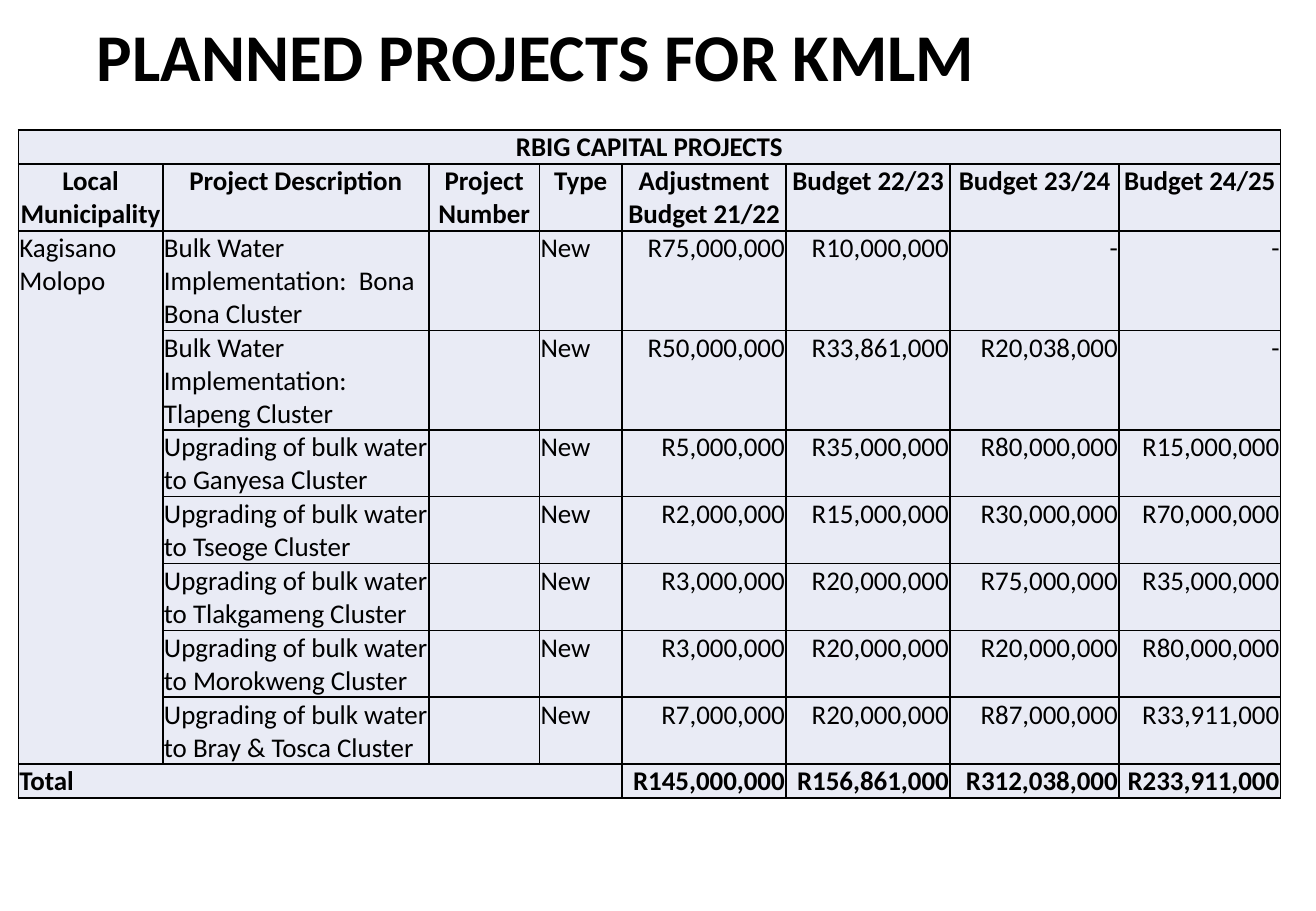
from dataclasses import dataclass

from lxml import etree
from pptx import Presentation
from pptx.dml.color import RGBColor
from pptx.enum.text import MSO_ANCHOR, PP_ALIGN
from pptx.oxml.ns import qn
from pptx.util import Inches, Pt

LEFT, CENTER, RIGHT = PP_ALIGN.LEFT, PP_ALIGN.CENTER, PP_ALIGN.RIGHT
MIDDLE = MSO_ANCHOR.MIDDLE


@dataclass(frozen=True)
class Theme:
    font: str = "Calibri"
    ink: str = "000000"
    cell: str = "E9EBF5"
    title_size: float = 39.6
    table_size: float = 16
    border: float = 1


THEME = Theme()

COLUMN_WIDTHS = [1.19, 2.19, 0.91, 0.68, 1.35, 1.35, 1.39, 1.33]
LINE_HEIGHT = 0.27
CELL_INSET = 0.01
LINES_PER_ROW = [1, 2, 3, 3, 2, 2, 2, 2, 2, 1]

HEADINGS = ["Local Municipality", "Project Description", "Project Number", "Type",
            "Adjustment Budget 21/22", "Budget 22/23", "Budget 23/24", "Budget 24/25"]
PROJECTS = [
    ("Bulk Water Implementation:  Bona Bona Cluster", "R75,000,000", "R10,000,000", "-", "-"),
    ("Bulk Water Implementation: Tlapeng Cluster",
     "R50,000,000", "R33,861,000", "R20,038,000", "-"),
    ("Upgrading of bulk water to Ganyesa Cluster",
     "R5,000,000", "R35,000,000", "R80,000,000", "R15,000,000"),
    ("Upgrading of bulk water to Tseoge Cluster",
     "R2,000,000", "R15,000,000", "R30,000,000", "R70,000,000"),
    ("Upgrading of bulk water to Tlakgameng Cluster",
     "R3,000,000", "R20,000,000", "R75,000,000", "R35,000,000"),
    ("Upgrading of bulk water to Morokweng Cluster",
     "R3,000,000", "R20,000,000", "R20,000,000", "R80,000,000"),
    ("Upgrading of bulk water to Bray & Tosca Cluster",
     "R7,000,000", "R20,000,000", "R87,000,000", "R33,911,000"),
]
TOTALS = ["R145,000,000", "R156,861,000", "R312,038,000", "R233,911,000"]


def write(frame, text, *, size, bold=False, align=LEFT, spacing=None):
    paragraph = frame.paragraphs[0]
    paragraph.alignment = align
    paragraph.line_spacing = spacing
    run = paragraph.add_run()
    run.text = text
    run.font.name = THEME.font
    run.font.size = Pt(size)
    run.font.bold = bold
    run.font.color.rgb = RGBColor.from_string(THEME.ink)


def add_title(slide, text, left, top, width, height):
    title = slide.shapes.add_textbox(Inches(left), Inches(top), Inches(width), Inches(height))
    title.text_frame.word_wrap = True
    title.text_frame.vertical_anchor = MIDDLE
    write(title.text_frame, text, size=THEME.title_size, bold=True, spacing=0.9)


def style_cell(cell):
    """Set the insets, borders and fill of a table cell."""
    cell.margin_left = cell.margin_right = cell.margin_top = Inches(CELL_INSET)
    cell.margin_bottom = 0
    cell.fill.solid()
    cell.fill.fore_color.rgb = RGBColor.from_string(THEME.cell)
    properties = cell.fill._xPr
    for position, side in enumerate(("a:lnL", "a:lnR", "a:lnT", "a:lnB")):
        line = etree.Element(qn(side), w=str(Pt(THEME.border)))
        solid = etree.SubElement(line, qn("a:solidFill"))
        etree.SubElement(solid, qn("a:srgbClr"), val=THEME.ink)
        properties.insert(position, line)


def budget_rows():
    """Return the cell texts of all rows, with blanks where cells are merged."""
    rows = [["RBIG CAPITAL PROJECTS"] + [""] * 7, HEADINGS]
    for index, (description, *budgets) in enumerate(PROJECTS):
        municipality = "" if index else "Kagisano Molopo"
        rows.append([municipality, description, "", "New", *budgets])
    return rows + [["Total", "", "", "", *TOTALS]]


def add_budget_table(slide, left, top):
    rows = budget_rows()
    heights = [lines * LINE_HEIGHT + CELL_INSET for lines in LINES_PER_ROW]
    table = slide.shapes.add_table(
        len(rows), len(COLUMN_WIDTHS), Inches(left), Inches(top),
        Inches(sum(COLUMN_WIDTHS)), Inches(sum(heights))).table
    table.first_row = table.horz_banding = False
    for column, width in zip(table.columns, COLUMN_WIDTHS):
        column.width = Inches(width)
    for row, height in zip(table.rows, heights):
        row.height = Inches(height)

    last = len(rows) - 1
    for r, texts in enumerate(rows):
        for c, text in enumerate(texts):
            cell = table.cell(r, c)
            style_cell(cell)
            if text:
                align = CENTER if r < 2 else RIGHT if c > 3 else LEFT
                write(cell.text_frame, text, size=THEME.table_size,
                      bold=r < 2 or r == last, align=align)

    table.cell(0, 0).merge(table.cell(0, 7))
    table.cell(2, 0).merge(table.cell(last - 1, 0))
    table.cell(last, 0).merge(table.cell(last, 3))


def main():
    deck = Presentation()
    deck.slide_width, deck.slide_height = Inches(10.83), Inches(7.5)
    slide = deck.slides.add_slide(deck.slide_layouts[6])
    add_title(slide, "PLANNED PROJECTS FOR KMLM", 0.7, 0.23, 9.34, 0.52)
    add_budget_table(slide, 0.15, 1.07)
    deck.save("out.pptx")


if __name__ == "__main__":
    main()
